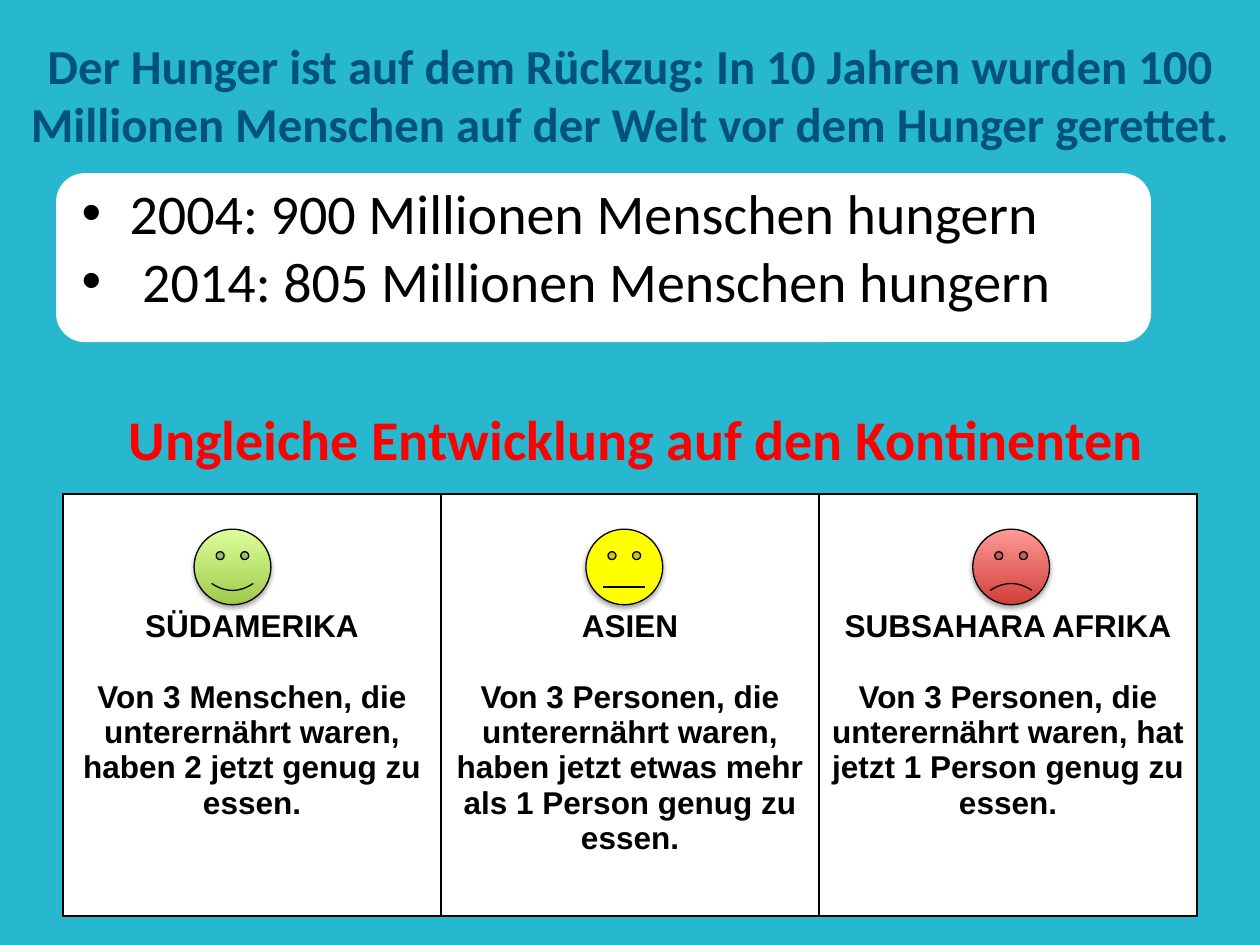
from dataclasses import dataclass
from typing import Optional

import lxml.etree
import pptx
import pptx.dml.color
import pptx.enum.shapes
import pptx.enum.text
import pptx.oxml
import pptx.oxml.ns
import pptx.util

Inches = pptx.util.Inches
Pt = pptx.util.Pt
RGBColor = pptx.dml.color.RGBColor
CENTER = pptx.enum.text.PP_ALIGN.CENTER
MIDDLE = pptx.enum.text.MSO_ANCHOR.MIDDLE
SHAPE = pptx.enum.shapes.MSO_SHAPE
qn = pptx.oxml.ns.qn
NS = 'xmlns:a="http://schemas.openxmlformats.org/drawingml/2006/main"'

TEAL = RGBColor(0x27, 0xB8, 0xCF)
NAVY = RGBColor(0x00, 0x52, 0x7D)
BLACK = RGBColor(0x00, 0x00, 0x00)
WHITE = RGBColor(0xFF, 0xFF, 0xFF)
RED = RGBColor(0xFF, 0x00, 0x00)
YELLOW = RGBColor(0xFF, 0xFF, 0x00)
LIME = RGBColor(0xA0, 0xC9, 0x4A)
PALE_LIME = RGBColor(0xDB, 0xFF, 0x9C)
BRICK = RGBColor(0xD1, 0x3F, 0x3B)
PINK = RGBColor(0xFF, 0x99, 0x95)


@dataclass(frozen=True)
class Region:
    name: str
    text: str
    face_left: float
    smile: float
    color: RGBColor
    highlight: Optional[RGBColor] = None


REGIONS = [
    Region("SÜDAMERIKA",
           "Von 3 Menschen, die unterernährt waren, haben 2 jetzt genug zu essen.",
           1.54, 0.047, LIME, PALE_LIME),
    Region("ASIEN",
           "Von 3 Personen, die unterernährt waren, haben jetzt etwas mehr als 1 Person genug zu essen.",
           4.65, 0, YELLOW),
    Region("SUBSAHARA AFRIKA",
           "Von 3 Personen, die unterernährt waren, hat jetzt 1 Person genug zu essen.",
           7.72, -0.046, BRICK, PINK),
]
BULLETS = ["2004: 900 Millionen Menschen hungern",
           " 2014: 805 Millionen Menschen hungern"]


def write(p, text: str, size: float, color: RGBColor, bold: bool = False,
          font: str = "Calibri") -> None:
    p.text = text
    for r in p.runs:
        r.font.name = font
        r.font.size = Pt(size)
        r.font.bold = bold
        r.font.color.rgb = color


def add_text_box(s, left: float, top: float, width: float, height: float):
    tf = s.shapes.add_textbox(Inches(left), Inches(top), Inches(width), Inches(height)).text_frame
    tf.word_wrap = True
    return tf


def set_bullet(p) -> None:
    pPr = p._p.get_or_add_pPr()
    pPr.set("marL", str(Inches(0.38)))
    pPr.set("indent", str(-Inches(0.38)))
    pPr.append(pptx.oxml.parse_xml(f'<a:buFont {NS} typeface="Arial"/>'))
    pPr.append(pptx.oxml.parse_xml(f'<a:buChar {NS} char="•"/>'))


def fill_cell(cell, region: Region) -> None:
    tcPr = cell._tc.get_or_add_tcPr()
    for side in ("lnL", "lnR", "lnT", "lnB"):
        tcPr.append(pptx.oxml.parse_xml(
            f'<a:{side} {NS} w="{Pt(1)}"><a:solidFill><a:srgbClr val="{BLACK}"/>'
            f'</a:solidFill></a:{side}>'))
    cell.fill.solid()
    cell.fill.fore_color.rgb = WHITE
    cell.margin_top = Inches(0.91)
    tf = cell.text_frame
    name, detail = tf.paragraphs[0], tf.add_paragraph()
    detail.space_before = Pt(20.5)
    for p, text in ((name, region.name), (detail, region.text)):
        write(p, text, 18, BLACK, True, "Arial")
        p.alignment = CENTER


def add_face(s, region: Region) -> None:
    sp = s.shapes.add_shape(SHAPE.SMILEY_FACE, Inches(region.face_left), Inches(4.2),
                            Inches(0.61), Inches(0.6))
    sp.adjustments[0] = region.smile
    if region.highlight is None:
        sp.fill.solid()
        sp.fill.fore_color.rgb = region.color
    else:
        sp.fill.gradient()
        sp.fill.gradient_angle = 90
        for stop, color in zip(sp.fill.gradient_stops, (region.color, region.highlight)):
            stop.color.rgb = color
    sp.line.color.rgb = BLACK
    sp.line.width = Pt(0.75)
    sp.shadow.inherit = False
    sp._element.spPr.find(qn("a:effectLst")).append(pptx.oxml.parse_xml(
        f'<a:outerShdw {NS} blurRad="{Pt(3.1)}" dist="{Pt(1.8)}" dir="5400000" rotWithShape="0">'
        f'<a:srgbClr val="{BLACK}"><a:alpha val="35000"/></a:srgbClr></a:outerShdw>'))


def main() -> None:
    """Build the slide on the retreat of world hunger."""
    prs = pptx.Presentation()
    prs.slide_width, prs.slide_height = Inches(10), Inches(7.5)
    s = prs.slides.add_slide(prs.slide_layouts[6])
    s.background.fill.solid()
    s.background.fill.fore_color.rgb = TEAL

    panel = s.shapes.add_shape(SHAPE.ROUNDED_RECTANGLE, Inches(0.45), Inches(1.38),
                               Inches(8.68), Inches(1.33))
    panel.shadow.inherit = False
    panel.fill.solid()
    panel.fill.fore_color.rgb = WHITE
    panel.line.color.rgb = WHITE
    panel.line.width = Pt(0.75)

    tf = add_text_box(s, 0, 0.12, 10, 1.25)
    tf.vertical_anchor = MIDDLE
    title = tf.paragraphs[0]
    write(title, "Der Hunger ist auf dem Rückzug: In 10 Jahren wurden 100 Millionen Menschen "
          "auf der Welt vor dem Hunger gerettet.", 27.9, NAVY, True)
    title.alignment = CENTER

    tf = add_text_box(s, 0.55, 1.37, 9, 5.13)
    for i, text in enumerate(BULLETS):
        p = tf.add_paragraph() if i else tf.paragraphs[0]
        write(p, text, 32, BLACK)
        set_bullet(p)
    heading = tf.add_paragraph()
    write(heading, "Ungleiche Entwicklung auf den Kontinenten", 32, RED, True)
    heading.alignment = CENTER
    heading.space_before = Pt(52)

    table = s.shapes.add_table(1, len(REGIONS), Inches(0.5), Inches(3.92),
                               Inches(9), Inches(3.35)).table
    for cell, region in zip(table.rows[0].cells, REGIONS):
        fill_cell(cell, region)
    for region in REGIONS:
        add_face(s, region)

    prs.save("out.pptx")


if __name__ == "__main__":
    main()
